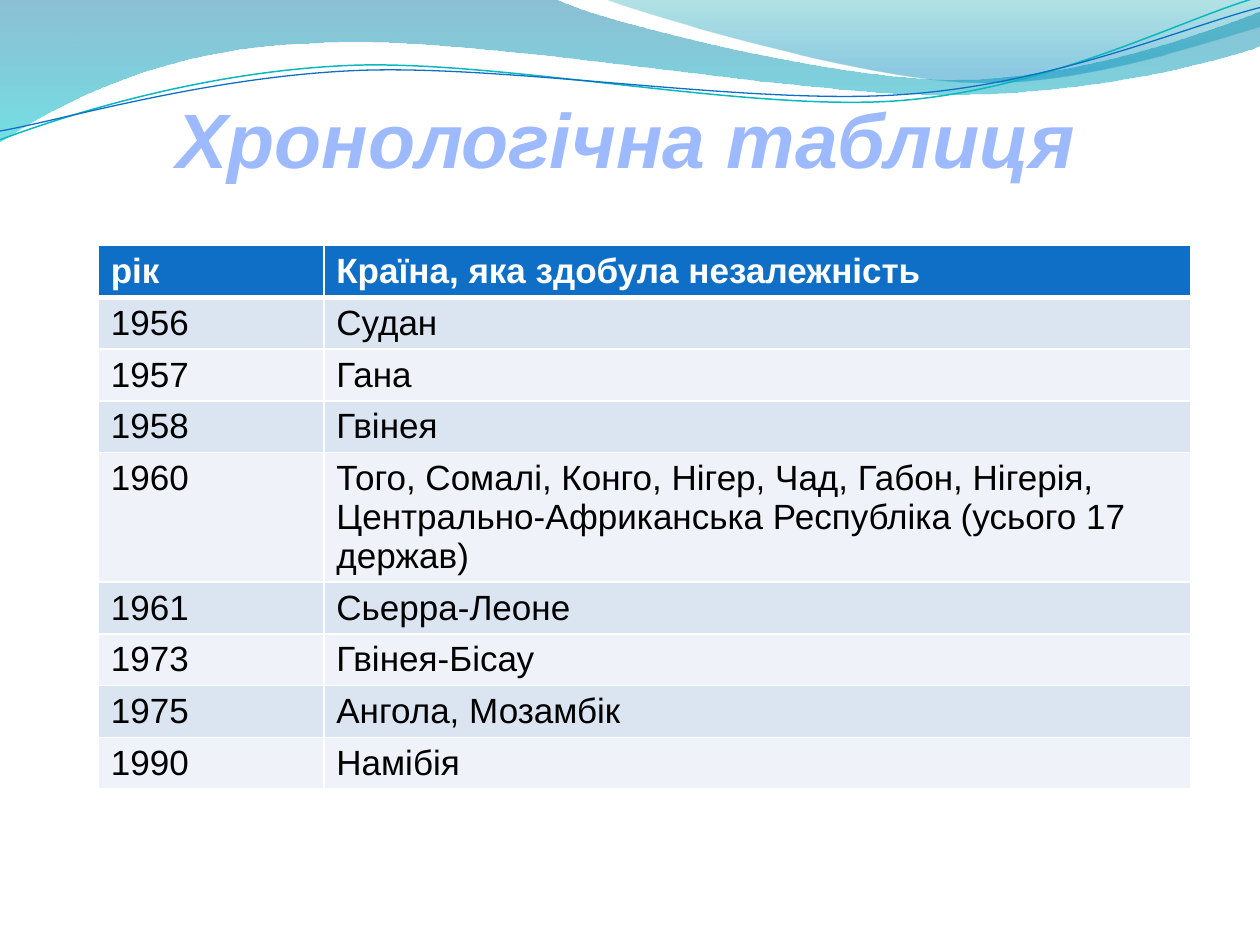
from lxml import etree
from pptx import Presentation
from pptx.dml.color import RGBColor
from pptx.enum.text import MSO_ANCHOR, PP_ALIGN
from pptx.oxml.ns import qn
from pptx.util import Inches, Pt

CENTER = PP_ALIGN.CENTER
MIDDLE = MSO_ANCHOR.MIDDLE
FONT = "Arial"
COLORS = {
    "sea": "0074A1", "aqua": "00C6CF", "teal": "00A1A9", "sky": "008BBF",
    "cyan": "0AB8BF", "blue": "0F6FC6", "title": "9EBAFF", "white": "FFFFFF",
    "black": "000000", "odd": "DBE5F1", "even": "EFF3F9",
}
BROAD = [
    (0, 0), (4.4, -0.01), (4.76, 0.17, 6.64, 0.63, 7.58, 0.63),
    (8.53, 0.63, 9.58, 0.26, 10, 0.09), (10.01, 0.36),
    (9.83, 0.44, 8.7, 0.76, 7.46, 0.75), (6.22, 0.75, 3.82, 0.28, 2.57, 0.34),
    (1.29, 0.36, 0.46, 0.83, -0.01, 1.13), (0, 0),
]
RIGHT = [
    (4.79, -0.01), (5.09, 0.11, 6.82, 0.62, 7.69, 0.65),
    (8.56, 0.69, 9.61, 0.32, 10, 0.21), (10, 0), (4.79, -0.01),
]
UPPER = [
    (0, 1.11), (0.48, 0.93, 1.58, 0.57, 2.77, 0.52),
    (3.95, 0.47, 5.93, 0.89, 7.13, 0.8), (8.33, 0.71, 9.38, 0.15, 9.98, -0.02),
]
LOWER = [
    (0, 1.04), (0.47, 0.96, 1.64, 0.61, 2.83, 0.56),
    (4.03, 0.51, 5.97, 0.84, 7.17, 0.75), (8.36, 0.67, 9.41, 0.21, 10, 0.06),
]
ROWS = [
    ("рік", "Країна, яка здобула незалежність"),
    ("1956", "Судан"),
    ("1957", "Гана"),
    ("1958", "Гвінея"),
    ("1960", "Того, Сомалі, Конго, Нігер, Чад, Габон, Нігерія, "
             "Центрально-Африканська Республіка (усього 17 держав)"),
    ("1961", "Сьерра-Леоне"),
    ("1973", "Гвінея-Бісау"),
    ("1975", "Ангола, Мозамбік"),
    ("1990", "Намібія"),
]


def rgb(name):
    """Return the named colour."""
    return RGBColor.from_string(COLORS[name])


def add_path(slide, path, close):
    """Draw lines and cubic curves as a freeform without shadow."""
    knots = [(Inches(part[i]), Inches(part[i + 1]))
             for part in path for i in range(0, len(part), 2)]
    pen = slide.shapes.build_freeform(*knots[0])
    pen.add_line_segments(knots[1:], close=close)
    shape = pen.convert_to_shape()
    shape.shadow.inherit = False
    lines = iter(list(shape.element.iter(qn("a:lnTo"))))
    for part in path[1:]:
        first = next(lines)
        if len(part) == 6:
            curve = etree.Element(qn("a:cubicBezTo"))
            first.addprevious(curve)
            for line in (first, next(lines), next(lines)):
                curve.append(line[0])
                line.getparent().remove(line)
    return shape


def add_wave(slide, path, stops):
    """Add a wave with a see-through gradient from top to bottom."""
    wave = add_path(slide, path, True)
    wave.line.fill.background()
    wave.fill.gradient()
    wave.fill.gradient_angle = 270
    for stop, (place, color, alpha) in zip(wave.fill.gradient_stops, stops):
        stop.position = place
        stop.color.rgb = rgb(color)
    tints = wave.element.spPr.iter(qn("a:srgbClr"))
    for tint, (place, color, alpha) in zip(tints, stops):
        etree.SubElement(tint, qn("a:alpha"), val=str(alpha * 1000))


def add_curve(slide, path, color, width):
    """Add a thin open curve."""
    curve = add_path(slide, path, False)
    curve.fill.background()
    curve.line.color.rgb = rgb(color)
    curve.line.width = Pt(width)


def style(para, size, color, bold):
    """Set the font of a paragraph."""
    font = para.font
    font.name = FONT
    font.size = Pt(size)
    font.bold = bold
    font.color.rgb = rgb(color)


def set_title(slide, text):
    """Place the title in front of the waves."""
    title = slide.shapes.title
    title.left, title.top = Inches(0.47), Inches(0.47)
    title.width, title.height = Inches(9), Inches(1.25)
    frame = title.text_frame
    frame.text = text
    frame.vertical_anchor = MIDDLE
    para = frame.paragraphs[0]
    para.alignment = CENTER
    style(para, 44, "title", True)
    para.font.italic = True
    title.element.getparent().append(title.element)


def set_edges(cell, top, bottom):
    """Give a cell white borders."""
    props = cell._tc.get_or_add_tcPr()
    for side, width in (("L", 1), ("R", 1), ("T", top), ("B", bottom)):
        line = etree.SubElement(props, qn(f"a:ln{side}"), w=str(Pt(width)))
        fill = etree.SubElement(line, qn("a:solidFill"))
        etree.SubElement(fill, qn("a:srgbClr"), val=COLORS["white"])


def add_grid(slide, rows):
    """Add the table of years and countries."""
    frame = slide.shapes.add_table(
        len(rows), 2, Inches(0.78), Inches(1.95), Inches(8.67), Inches(4.23))
    table = frame.table
    for col, width in zip(table.columns, (1.79, 6.88)):
        col.width = Inches(width)
    for i, row in enumerate(rows):
        table.rows[i].height = Inches(0.41)
        head = i == 0
        fill = "blue" if head else "odd" if i % 2 else "even"
        for j, text in enumerate(row):
            cell = table.cell(i, j)
            cell.text = text
            set_edges(cell, 3 if i == 1 else 1, 3 if head else 1)
            cell.fill.solid()
            cell.fill.fore_color.rgb = rgb(fill)
            style(cell.text_frame.paragraphs[0], 20,
                  "white" if head else "black", head)
    frame.height = Inches(4.23)


def main():
    """Build and save the slide."""
    deck = Presentation()
    deck.slide_width, deck.slide_height = Inches(10), Inches(7.5)
    slide = deck.slides.add_slide(deck.slide_layouts[5])
    add_wave(slide, BROAD, [(0, "sea", 45), (1, "aqua", 55)])
    add_wave(slide, RIGHT, [(0, "teal", 30), (0.8, "sky", 45)])
    add_curve(slide, UPPER, "cyan", 0.85)
    add_curve(slide, LOWER, "blue", 0.75)
    set_title(slide, "Хронологічна таблиця")
    add_grid(slide, ROWS)
    deck.save("out.pptx")


if __name__ == "__main__":
    main()
